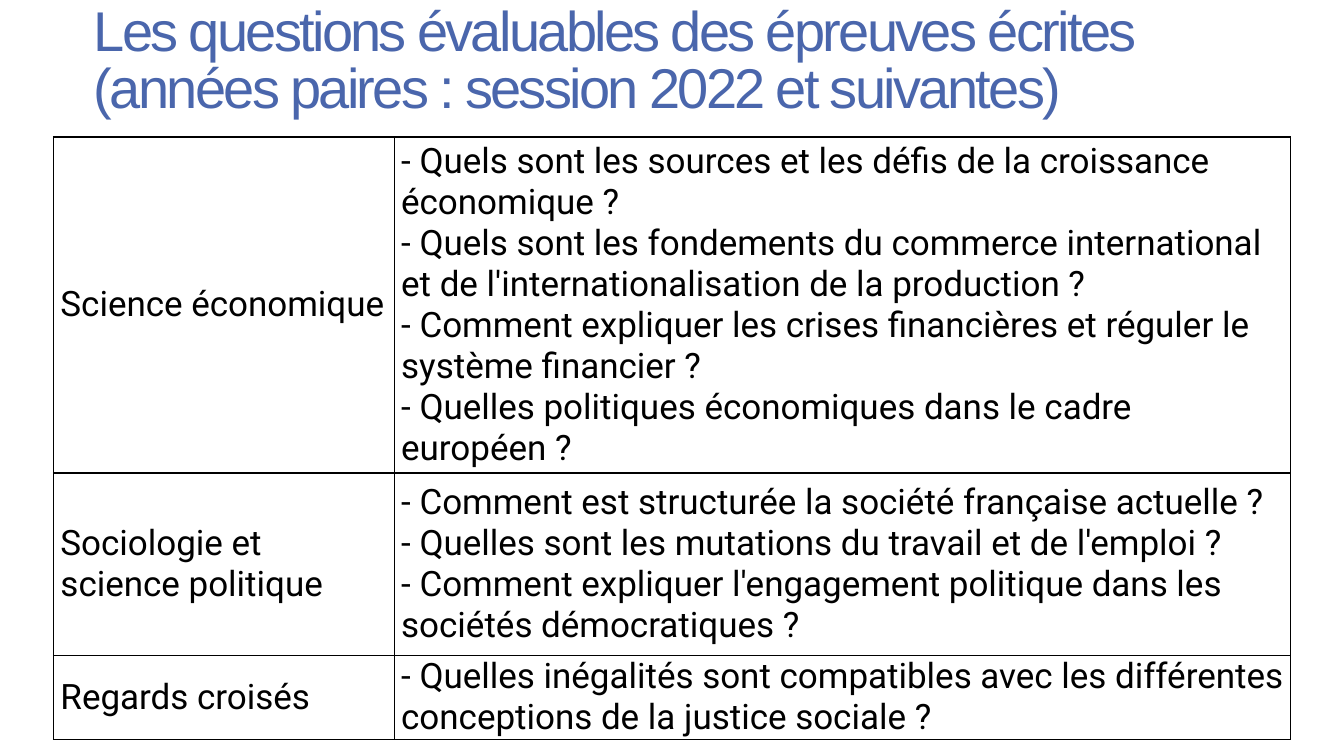
from dataclasses import dataclass

from lxml.etree import SubElement
from pptx import Presentation
from pptx.dml.color import RGBColor
from pptx.enum.text import MSO_ANCHOR
from pptx.oxml.ns import qn
from pptx.slide import Slide
from pptx.table import _Cell as Cell
from pptx.text.text import _Run as Run
from pptx.util import Pt

BLUE = "4A66AC"
BLACK = "000000"
TITLE_LINES = [
    "Les questions évaluables des épreuves écrites",
    "(années paires : session 2022 et suivantes)",
]
COLUMN_WIDTHS = [243.4, 640.1]


@dataclass
class Theme:
    subject: str
    questions: list[str]
    height: float


THEMES = [
    Theme("Science économique", [
        "- Quels sont les sources et les défis de la croissance économique ?",
        "- Quels sont les fondements du commerce international et de "
        "l'internationalisation de la production ?",
        "- Comment expliquer les crises financières et réguler le système financier ?",
        "- Quelles politiques économiques dans le cadre européen ?",
    ], 233.3),
    Theme("Sociologie et science politique", [
        "- Comment est structurée la société française actuelle ?",
        "- Quelles sont les mutations du travail et de l'emploi ?",
        "- Comment expliquer l'engagement politique dans les sociétés démocratiques ?",
    ], 130.3),
    Theme("Regards croisés", [
        "- Quelles inégalités sont compatibles avec les différentes conceptions "
        "de la justice sociale ?",
    ], 53.3),
]


def color(value: str) -> RGBColor:
    return RGBColor.from_string(value)


def style_run(run: Run, font: str, size: float, ink: str) -> None:
    run.font.name = font
    run.font.size = Pt(size)
    run.font.color.rgb = color(ink)


def add_title(slide: Slide) -> None:
    title = slide.shapes.add_textbox(Pt(63.4), Pt(-20.2), Pt(946.8), Pt(130.3))
    frame = title.text_frame
    frame.word_wrap = True
    frame.vertical_anchor = MSO_ANCHOR.MIDDLE
    frame.margin_left = frame.margin_right = Pt(3.6)
    frame.margin_top = frame.margin_bottom = Pt(3.6)
    for index, line in enumerate(TITLE_LINES):
        paragraph = frame.add_paragraph() if index else frame.paragraphs[0]
        paragraph.line_spacing = 0.85
        run = paragraph.add_run()
        run.text = line
        style_run(run, "Arial", 40, BLUE)
        run.font._element.set("spc", "-190")


def add_borders(cell: Cell) -> None:
    """Draw a thin line on all four sides; call before filling the cell."""
    properties = cell._tc.get_or_add_tcPr()
    for side in ("lnL", "lnR", "lnT", "lnB"):
        line = SubElement(properties, qn(f"a:{side}"), w=str(Pt(1)))
        fill = SubElement(line, qn("a:solidFill"))
        SubElement(fill, qn("a:srgbClr"), val=BLACK)


def fill_cell(cell: Cell, lines: list[str]) -> None:
    add_borders(cell)
    cell.fill.background()
    cell.vertical_anchor = MSO_ANCHOR.MIDDLE
    cell.margin_left = cell.margin_right = Pt(5)
    cell.margin_top = cell.margin_bottom = Pt(0)
    paragraph = cell.text_frame.paragraphs[0]
    for index, line in enumerate(lines):
        if index:
            paragraph.add_line_break()
        run = paragraph.add_run()
        run.text = line
        style_run(run, "Roboto", 25, BLACK)


def add_themes(slide: Slide) -> None:
    table = slide.shapes.add_table(
        len(THEMES), len(COLUMN_WIDTHS), Pt(38.2), Pt(97.9),
        Pt(sum(COLUMN_WIDTHS)), Pt(sum(theme.height for theme in THEMES)),
    ).table
    table.first_row = table.horz_banding = False
    for column, width in zip(table.columns, COLUMN_WIDTHS):
        column.width = Pt(width)
    for index, theme in enumerate(THEMES):
        table.rows[index].height = Pt(theme.height)
        fill_cell(table.cell(index, 0), [theme.subject])
        fill_cell(table.cell(index, 1), theme.questions)


def main() -> None:
    deck = Presentation()
    deck.slide_width, deck.slide_height = Pt(960), Pt(540)
    slide = deck.slides.add_slide(deck.slide_layouts[6])
    add_title(slide)
    add_themes(slide)
    deck.save("out.pptx")


if __name__ == "__main__":
    main()
